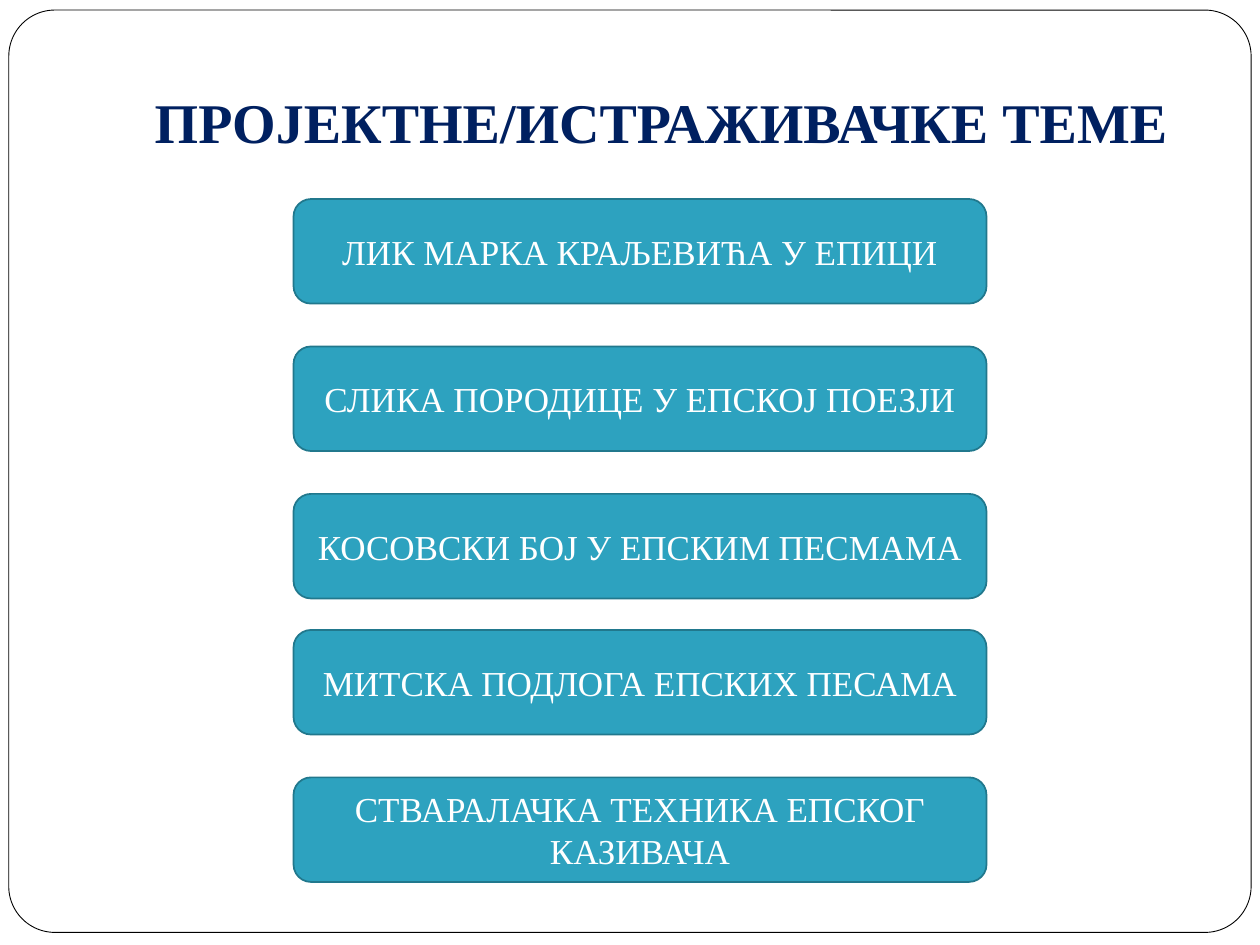
from pptx import Presentation
from pptx.dml.color import RGBColor
from pptx.enum.shapes import MSO_SHAPE
from pptx.enum.text import MSO_ANCHOR, PP_ALIGN
from pptx.util import Inches, Pt

COLORS = {
    "white": "FFFFFF",
    "frame": "000000",
    "title": "002060",
    "topic": "2DA2BF",
    "topic_line": "21788D",
}
FONT = "Times New Roman"

# Top edge in inches and wording of each topic
TOPICS = [
    (1.58, "ЛИК МАРКА КРАЉЕВИЋА У ЕПИЦИ"),
    (2.75, "СЛИКА ПОРОДИЦЕ У ЕПСКОЈ ПОЕЗЈИ"),
    (3.92, "КОСОВСКИ БОЈ У ЕПСКИМ ПЕСМАМА"),
    (5, "МИТСКА ПОДЛОГА ЕПСКИХ ПЕСАМА"),
    (6.17, "СТВАРАЛАЧКА ТЕХНИКА ЕПСКОГ КАЗИВАЧА"),
]


def color(name):
    return RGBColor.from_string(COLORS[name])


def write(shape, text, size, color_name, anchor, bold=False):
    frame = shape.text_frame
    frame.word_wrap = True
    frame.vertical_anchor = anchor
    para = frame.paragraphs[0]
    para.alignment = PP_ALIGN.CENTER
    span = para.add_run()
    span.text = text
    span.font.name = FONT
    span.font.size = Pt(size)
    span.font.bold = bold
    span.font.color.rgb = color(color_name)


def add_rounded_box(page, left, top, width, height, fill, line, line_width):
    box = page.shapes.add_shape(
        MSO_SHAPE.ROUNDED_RECTANGLE,
        Inches(left), Inches(top), Inches(width), Inches(height))
    box.shadow.inherit = False
    box.fill.solid()
    box.fill.fore_color.rgb = color(fill)
    box.line.color.rgb = color(line)
    box.line.width = Pt(line_width)
    return box


def add_frame(page):
    frame = add_rounded_box(page, 0.07, 0.08, 9.86, 7.32, "white", "frame", 0.5)
    frame.adjustments[0] = 0.05
    # Keep the title in front of the filled frame
    frame.element.addnext(page.shapes.title.element)


def set_title(page, text):
    title = page.shapes.title
    title.left, title.top = Inches(1), Inches(0.3)
    title.width, title.height = Inches(8.5), Inches(1.03)
    title.text_frame.margin_bottom = Inches(0.1)
    write(title, text, 32, "title", MSO_ANCHOR.BOTTOM, bold=True)


def add_topic(page, top, text):
    box = add_rounded_box(page, 2.33, top, 5.5, 0.83, "topic", "topic_line", 1)
    write(box, text, 20, "white", MSO_ANCHOR.MIDDLE)


def main():
    deck = Presentation()
    deck.slide_width, deck.slide_height = Inches(10), Inches(7.5)
    page = deck.slides.add_slide(deck.slide_layouts.get_by_name("Title Only"))

    # Frame and heading
    add_frame(page)
    set_title(page, "ПРОЈЕКТНЕ/ИСТРАЖИВАЧКЕ ТЕМЕ")

    # Column of topics
    for top, text in TOPICS:
        add_topic(page, top, text)

    deck.save("out.pptx")


if __name__ == "__main__":
    main()
